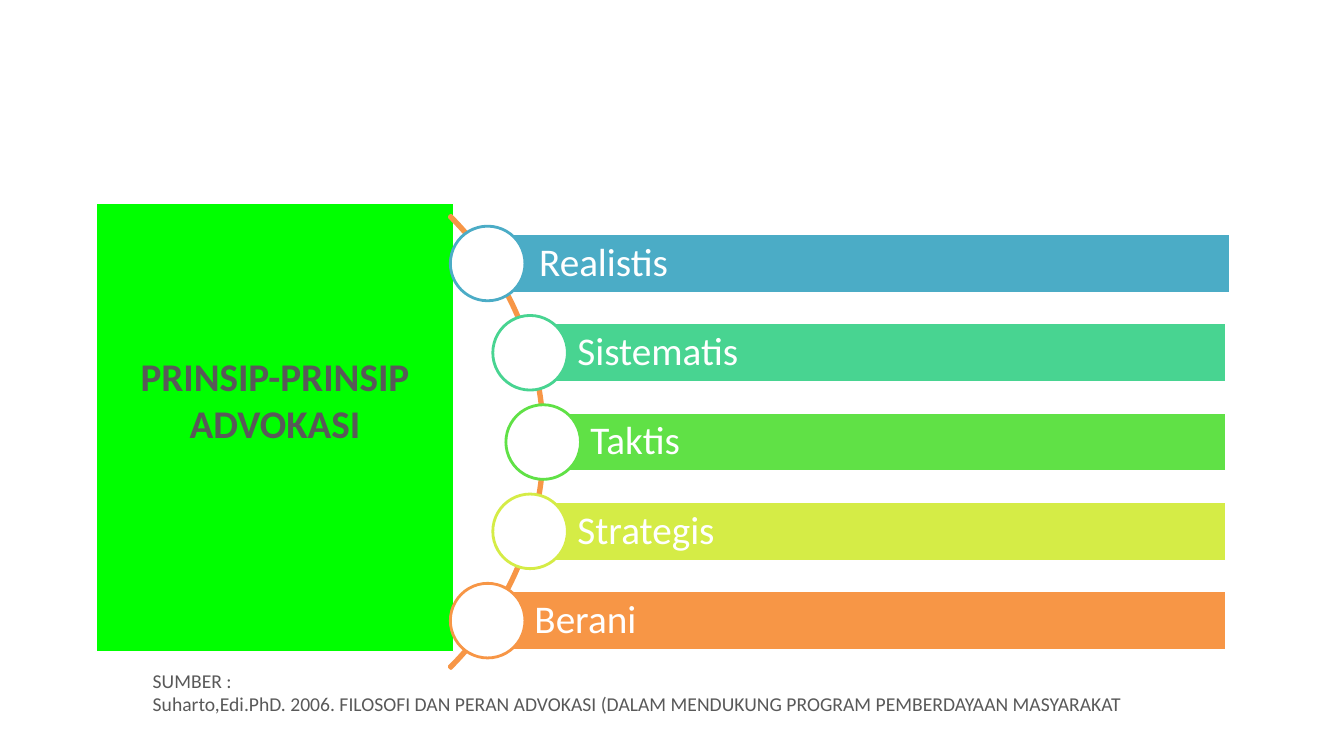
"""Build the slide on the principles of advocacy."""
from pptx import Presentation
from pptx.dml.color import RGBColor
from pptx.enum.shapes import MSO_SHAPE as SHAPE
from pptx.enum.text import MSO_ANCHOR as ANCHOR, PP_ALIGN as ALIGN
from pptx.util import Cm, Pt

COLORS = {
    "white": "FFFFFF",
    "panel": "00FF00",
    "text": "595959",
    "teal": "4BACC6",
    "mint": "48D491",
    "green": "60E146",
    "lime": "D5EC46",
    "orange": "F79646",
}


def add_figure(kind, left, top, width, height, fill, line, weight=2):
    figure = page.shapes.add_shape(kind, Cm(left), Cm(top), Cm(width), Cm(height))
    figure.shadow.inherit = False
    figure.fill.solid()
    figure.fill.fore_color.rgb = RGBColor.from_string(COLORS[fill])
    figure.line.color.rgb = RGBColor.from_string(COLORS[line])
    figure.line.width = Pt(weight)
    return figure


def write(box, text, size, color, align=ALIGN.LEFT, bold=False):
    box.text_frame.text = text
    for paragraph in box.text_frame.paragraphs:
        paragraph.alignment = align
        for span in paragraph.runs:
            span.font.name = "Calibri"
            span.font.size = Pt(size)
            span.font.bold = bold
            span.font.color.rgb = RGBColor.from_string(COLORS[color])


deck = Presentation()
deck.slide_width, deck.slide_height = Cm(33.87), Cm(19.05)
page = deck.slides.add_slide(deck.slide_layouts[6])

panel = add_figure(SHAPE.RECTANGLE, 2.42, 5.14, 9.02, 11.28, "panel", "white", 0.75)
write(panel, "PRINSIP-PRINSIP ADVOKASI", 28, "text", ALIGN.CENTER, True)
panel.text_frame.vertical_anchor = ANCHOR.TOP
panel.text_frame.margin_top = Cm(3.74)

arc = add_figure(SHAPE.BLOCK_ARC, -2.42, 3.06, 16.15, 16.15, "orange", "orange")
arc.fill.background()
for index, value in enumerate((189, 27, 0.004)):
    arc.adjustments[index] = value

BAR_TOP, BAR_STEP, BAR_HEIGHT = 5.89, 2.25, 1.5
CIRCLE = 1.88
principles = [
    ("Realistis", "teal", 12.4, 31.02, 11.35),
    ("Sistematis", "mint", 13.36, 30.91, 12.42),
    ("Taktis", "green", 13.69, 30.91, 12.75),
    ("Strategis", "lime", 13.36, 30.91, 12.42),
    ("Berani", "orange", 12.28, 30.91, 11.35),
]
for row, (name, color, left, right, circle_left) in enumerate(principles):
    top = BAR_TOP + row * BAR_STEP
    bar = add_figure(SHAPE.RECTANGLE, left, top, right - left, BAR_HEIGHT, color, "white")
    write(bar, name, 28, "white")
    frame = bar.text_frame
    frame.vertical_anchor = ANCHOR.MIDDLE
    frame.margin_left = Cm(1.19)
    frame.margin_top = frame.margin_right = frame.margin_bottom = Cm(0.2)
    frame.paragraphs[0].line_spacing = 0.9
    circle_top = top + (BAR_HEIGHT - CIRCLE) / 2
    add_figure(SHAPE.OVAL, circle_left, circle_top, CIRCLE, CIRCLE, "white", color)

source = page.shapes.add_textbox(Cm(3.6), Cm(16.72), Cm(25.22), Cm(1.2))
source.text_frame.word_wrap = True
write(
    source,
    "SUMBER :\nSuharto,Edi.PhD. 2006. FILOSOFI DAN PERAN ADVOKASI "
    "(DALAM MENDUKUNG PROGRAM PEMBERDAYAAN MASYARAKAT",
    14,
    "text",
)

deck.save("out.pptx")
